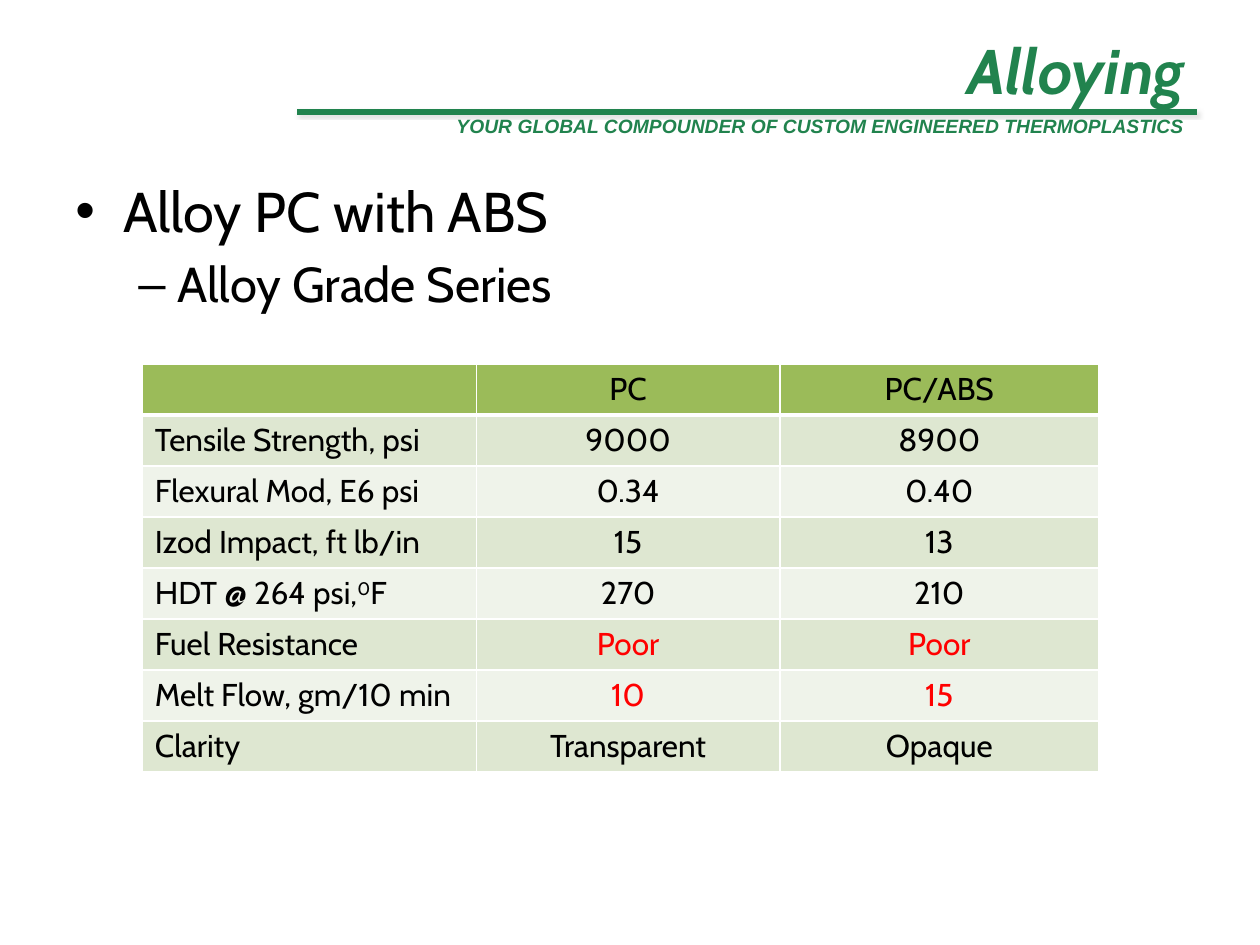
import pptx
import pptx.util
import pptx.dml.color
import pptx.enum.shapes
import pptx.enum.text
import pptx.oxml
import pptx.oxml.ns

Pt = pptx.util.Pt
Align = pptx.enum.text.PP_ALIGN
NS = pptx.oxml.ns.nsdecls("a")
COLORS = {
    "green": "21834E", "black": "000000", "red": "FF0000", "white": "FFFFFF",
    "head": "9BBB59", "odd": "DEE7D1", "even": "EFF3EA", "gray": "808080",
}


class Page:
    cols, rows = 100, 75
    face = "Cabin"

    def __init__(self, deck):
        self.unit = deck.slide_width // self.cols
        self.slide = deck.slides.add_slide(deck.slide_layouts[5])

    def span(self, *sizes):
        return [round(size * self.unit) for size in sizes]

    def color(self, name):
        return pptx.dml.color.RGBColor.from_string(COLORS[name])

    def run(self, para, text, size, color="black", bold=False, face=None):
        run = para.add_run()
        run.text = text
        font = run.font
        font.name, font.size = face or self.face, Pt(size)
        font.bold = font.italic = bold
        font.color.rgb = self.color(color)
        return run

    def rule(self, x, y, end, shadow=False):
        kind = pptx.enum.shapes.MSO_CONNECTOR.STRAIGHT
        line = self.slide.shapes.add_connector(kind, *self.span(x, y, end, y))
        line.line.color.rgb = self.color("green")
        line.line.width = Pt(3)
        shade = (
            f'<a:outerShdw blurRad="{Pt(2)}" dist="{Pt(1)}" dir="2700000">'
            f'<a:srgbClr val="{COLORS["gray"]}"><a:alpha val="25000"/></a:srgbClr>'
            '</a:outerShdw>'
        ) if shadow else ""
        line._element.spPr.append(pptx.oxml.parse_xml(
            f'<a:effectLst {NS}>{shade}</a:effectLst>'))

    def title(self, text, area):
        shape = self.slide.shapes.title
        shape.left, shape.top, shape.width, shape.height = self.span(*area)
        frame = shape.text_frame
        frame.auto_size = pptx.enum.text.MSO_AUTO_SIZE.NONE
        frame.vertical_anchor = pptx.enum.text.MSO_ANCHOR.BOTTOM
        para = frame.paragraphs[0]
        para.alignment = Align.RIGHT
        self.run(para, text, 36, "green", True)

    def frame(self, area):
        frame = self.slide.shapes.add_textbox(*self.span(*area)).text_frame
        frame.word_wrap = True
        return frame

    def motto(self, text, area):
        para = self.frame(area).paragraphs[0]
        para.alignment = Align.RIGHT
        self.run(para, text, 11, "green", True, "Arial")

    def list(self, items, area):
        frame = self.frame(area)
        for i, (text, size, mark, left, hang) in enumerate(items):
            para = frame.add_paragraph() if i else frame.paragraphs[0]
            para.level = i
            props = para._p.get_or_add_pPr()
            margin, indent = self.span(left, -hang)
            props.set("marL", str(margin))
            props.set("indent", str(indent))
            props.append(pptx.oxml.parse_xml(f'<a:buFont {NS} typeface="Arial"/>'))
            props.append(pptx.oxml.parse_xml(f'<a:buChar {NS} char="{mark}"/>'))
            if i:
                para.space_before = Pt(6)
            self.run(para, text, size)

    def border(self, cell, base):
        props = cell._tc.get_or_add_tcPr()
        for side, width in (("L", 1), ("R", 1), ("T", 1), ("B", base)):
            props.append(pptx.oxml.parse_xml(
                f'<a:ln{side} {NS} w="{Pt(width)}"><a:solidFill>'
                f'<a:srgbClr val="{COLORS["white"]}"/></a:solidFill></a:ln{side}>'))

    def cell(self, cell, parts, fill, color, align, base):
        self.border(cell, base)
        cell.fill.solid()
        cell.fill.fore_color.rgb = self.color(fill)
        para = cell.text_frame.paragraphs[0]
        para.alignment = align
        for i, part in enumerate(parts):
            run = self.run(para, part, 18, color)
            if i == 1:
                run.font._element.set("baseline", "30000")

    def table(self, data, widths, x, y, height):
        area = self.span(x, y, sum(widths), height)
        table = self.slide.shapes.add_table(len(data), len(widths), *area).table
        table.horz_banding = False
        for col, width in zip(table.columns, self.span(*widths)):
            col.width = width
        for r, row in enumerate(data):
            fill = ("odd" if r % 2 else "even") if r else "head"
            for c, value in enumerate(row):
                parts = value if isinstance(value, tuple) else (value,) if value else ()
                color = "red" if c and row[0] in ALERTS else "black"
                align = Align.CENTER if c else Align.LEFT
                self.cell(table.cell(r, c), parts, fill, color, align, 1 if r else 3)


ALERTS = ("Fuel Resistance", "Melt Flow, gm/10 min")
DATA = [
    ("", "PC", "PC/ABS"),
    ("Tensile Strength, psi", "9000", "8900"),
    ("Flexural Mod, E6 psi", "0.34", "0.40"),
    ("Izod Impact, ft lb/in", "15", "13"),
    (("HDT @ 264 psi,", "0", "F"), "270", "210"),
    ("Fuel Resistance", "Poor", "Poor"),
    ("Melt Flow, gm/10 min", "10", "15"),
    ("Clarity", "Transparent", "Opaque"),
]
ITEMS = [
    ("Alloy PC with ABS", 32, "•", 3.8, 3.8),
    ("Alloy Grade Series", 28, "–", 8.1, 3.1),
]


def main():
    deck = pptx.Presentation()
    deck.slide_width = pptx.util.Inches(10)
    deck.slide_height = pptx.util.Inches(7.5)
    page = Page(deck)
    left, right = 23.6, 95
    for shadow in (False, True):
        page.rule(left, 8.9, right, shadow)
    page.motto("YOUR GLOBAL COMPOUNDER OF CUSTOM ENGINEERED THERMOPLASTICS",
               (left, 8.6, right - left, 2.9))
    page.title("Alloying", (left, 0, right - left, 9))
    page.list(ITEMS, (5, 13.5, 90, 13))
    page.table(DATA, (26.5, 24.1, 25.3), 11.3, 28.9, 32.4)
    deck.save("out.pptx")


if __name__ == "__main__":
    main()
